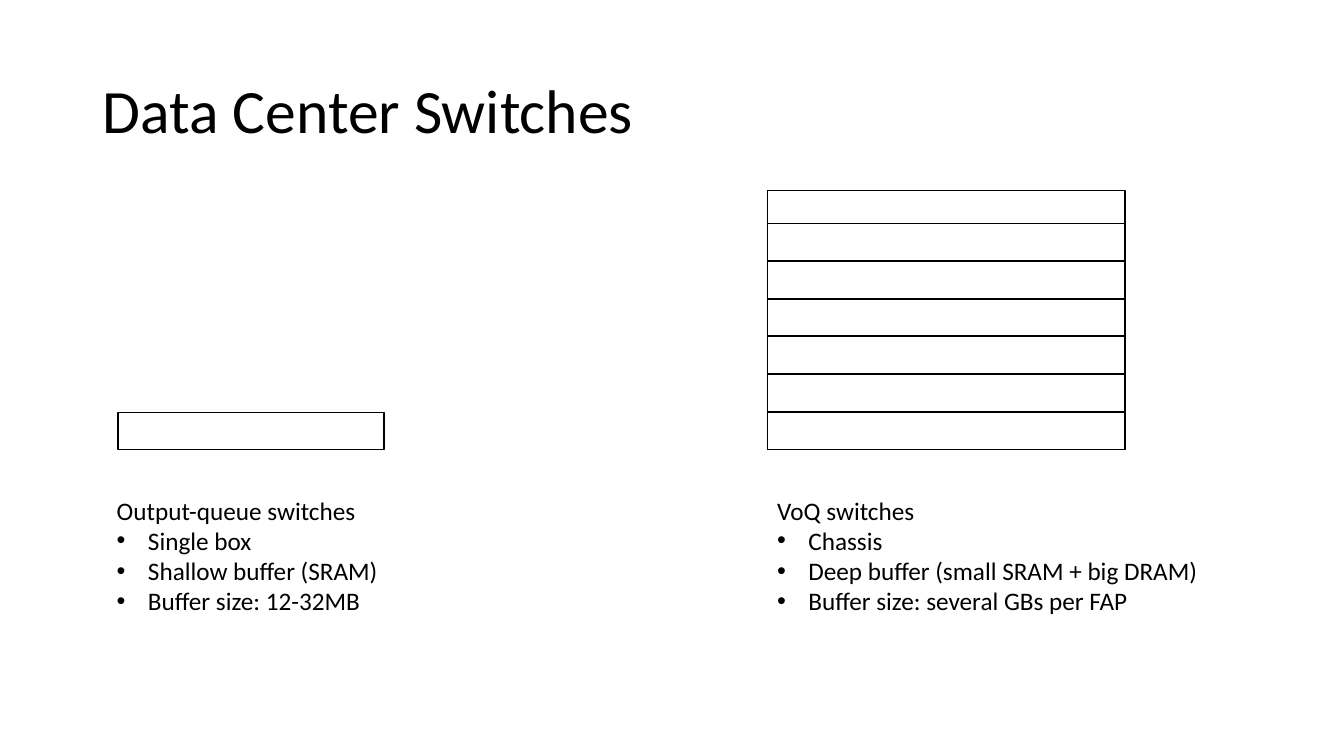
from lxml import etree
from pptx import Presentation
from pptx.dml.color import RGBColor
from pptx.enum.shapes import MSO_SHAPE
from pptx.enum.text import MSO_ANCHOR, MSO_AUTO_SIZE
from pptx.oxml.ns import qn
from pptx.util import Inches, Pt

RECT = MSO_SHAPE.RECTANGLE
MIDDLE = MSO_ANCHOR.MIDDLE
GROW = MSO_AUTO_SIZE.SHAPE_TO_FIT_TEXT
FONT = "Calibri"
INK, PAPER = "000000", "FFFFFF"
INDENT = Inches(0.31)

deck = Presentation()
deck.slide_width, deck.slide_height = Inches(13.33), Inches(7.5)
slide = deck.slides.add_slide(deck.slide_layouts[6])


def paint(target, color):
    if hasattr(target, "solid"):
        target.solid()
        target = target.fore_color
    target.rgb = RGBColor.from_string(color)


def write(para, text, size):
    para.text = text
    para.font.name = FONT
    para.font.size = Pt(size)
    paint(para.font.color, INK)


title = slide.shapes.add_textbox(Inches(0.92), Inches(0.4), Inches(11.5), Inches(1.45))
frame = title.text_frame
frame.word_wrap = True
frame.vertical_anchor = MIDDLE
write(frame.paragraphs[0], "Data Center Switches", 44)
frame.paragraphs[0].line_spacing = 0.9

left, base, pitch, slot = 7.61, 4.09, 0.375, 0.37
boxes = [(1.17, base, 2.64, slot), (left, 1.89, 3.55, 2.57)]
boxes += [(left, base - row * pitch, 3.55, slot) for row in range(6)]
for box in boxes:
    unit = slide.shapes.add_shape(RECT, *map(Inches, box))
    unit.shadow.inherit = False
    paint(unit.fill, PAPER)
    paint(unit.line.fill, INK)
    unit.line.width = Pt(1)

notes = [
    (1.06, 2.83, ["Output-queue switches", "Single box",
                  "Shallow buffer (SRAM)", "Buffer size: 12-32MB"]),
    (left, 4.43, ["VoQ switches", "Chassis",
                  "Deep buffer (small SRAM + big DRAM)",
                  "Buffer size: several GBs per FAP"]),
]
for x, width, lines in notes:
    note = slide.shapes.add_textbox(Inches(x), Inches(4.86), Inches(width), Inches(1.31))
    frame = note.text_frame
    frame.word_wrap = False
    frame.auto_size = GROW
    for row, text in enumerate(lines):
        para = frame.add_paragraph() if row else frame.paragraphs[0]
        write(para, text, 18)
        if row:
            props = para._p.get_or_add_pPr()
            props.set("marL", str(INDENT))
            props.set("indent", str(-INDENT))
            face = etree.Element(qn("a:buFont"), typeface="Arial")
            mark = etree.Element(qn("a:buChar"), char="•")
            props.insert(0, face)
            props.insert(1, mark)

deck.save("out.pptx")
